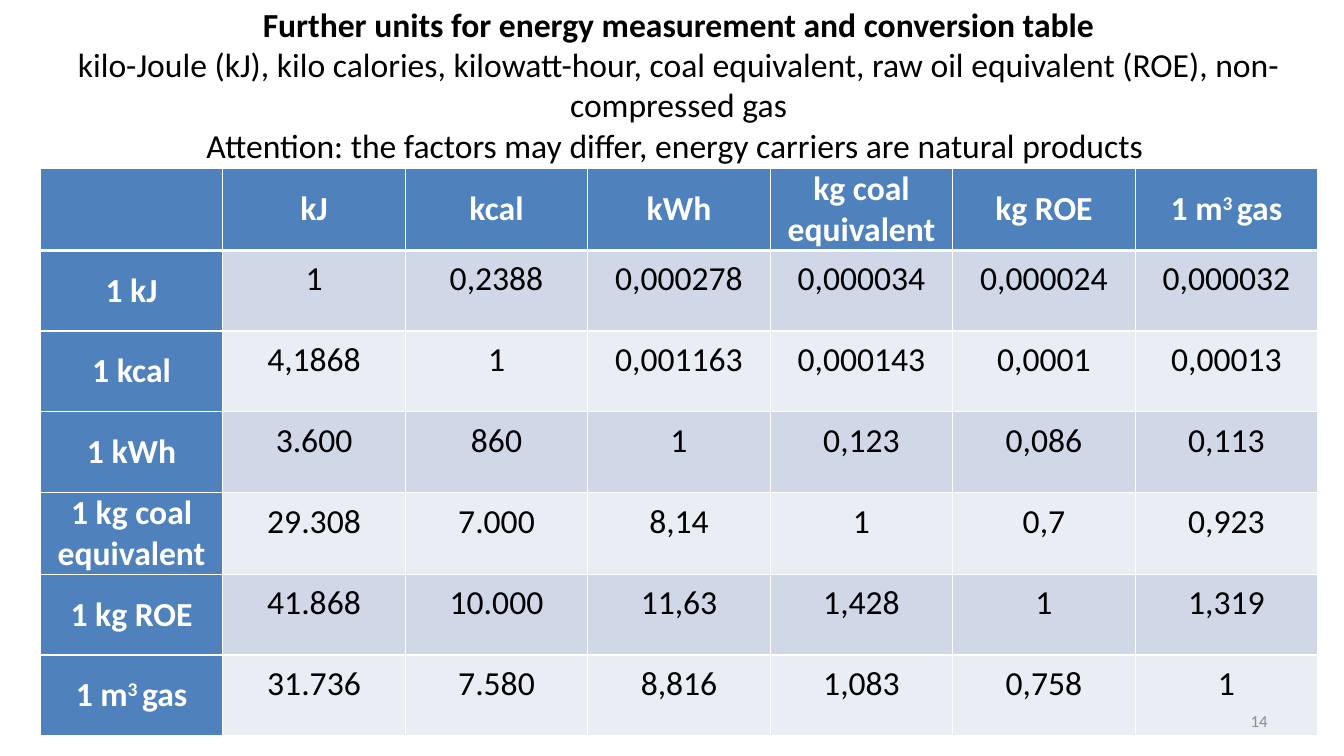
from lxml.etree import SubElement
from pptx import Presentation
from pptx.dml.color import RGBColor
from pptx.enum.text import MSO_ANCHOR, MSO_AUTO_SIZE, PP_ALIGN
from pptx.oxml.ns import qn
from pptx.util import Inches, Pt

# Content; text between two ^ marks is superscript
HEADING = "Further units for energy measurement and conversion table"
SUBTITLE = [
    "kilo-Joule (kJ), kilo calories, kilowatt-hour, coal equivalent, "
    "raw oil equivalent (ROE), non-compressed gas",
    "Attention: the factors may differ, energy carriers are natural products ",
]
CONVERSIONS = [
    ["", "kJ", "kcal", "kWh", "kg coal equivalent", "kg ROE", "1 m^3 ^gas"],
    ["1 kJ", "1", "0,2388", "0,000278", "0,000034", "0,000024", "0,000032"],
    ["1 kcal", "4,1868", "1", "0,001163", "0,000143", "0,0001", "0,00013"],
    ["1 kWh", "3.600", "860", "1", "0,123", "0,086", "0,113"],
    ["1 kg coal equivalent", "29.308", "7.000", "8,14", "1", "0,7", "0,923"],
    ["1 kg ROE", "41.868", "10.000", "11,63", "1,428", "1", "1,319"],
    ["1 m^3 ^gas", "31.736", "7.580", "8,816", "1,083", "0,758", "1"],
]
PAGE_NUMBER = "14"

FONT = "Calibri"
BLACK = RGBColor(0x00, 0x00, 0x00)
WHITE = RGBColor(0xFF, 0xFF, 0xFF)
GRAY = RGBColor(0x8C, 0x8C, 0x8C)
BLUE = RGBColor(0x4F, 0x81, 0xBD)
DARK_BAND = RGBColor(0xD0, 0xD8, 0xE8)
LIGHT_BAND = RGBColor(0xE9, 0xED, 0xF4)


def write(para, text, size=24, color=BLACK, bold=False, align=PP_ALIGN.CENTER):
    para.alignment = align
    for index, part in enumerate(text.split("^")):
        if not part:
            continue
        span = para.add_run()
        span.text = part
        span.font.name = FONT
        span.font.size = Pt(size)
        span.font.bold = bold
        span.font.color.rgb = color
        if index % 2:
            span.font._element.set("baseline", "30000")


def set_borders(cell, bottom_width):
    properties = cell._tc.get_or_add_tcPr()
    widths = {"lnL": 1, "lnR": 1, "lnT": 1, "lnB": bottom_width}
    for position, (side, width) in enumerate(widths.items()):
        line = SubElement(properties, qn(f"a:{side}"), w=str(Pt(width)))
        fill = SubElement(line, qn("a:solidFill"))
        SubElement(fill, qn("a:srgbClr"), val=str(WHITE))
        properties.insert(position, line)


deck = Presentation()
deck.slide_width, deck.slide_height = Inches(13.33), Inches(7.5)
page = deck.slides.add_slide(deck.slide_layouts[5])

# Title
title = page.shapes.title
title.left, title.top = Inches(-0.03), Inches(-0.11)
title.width, title.height = Inches(13.52), Inches(1.89)
frame = title.text_frame
frame.auto_size = MSO_AUTO_SIZE.NONE
frame.word_wrap = True
frame.vertical_anchor = MSO_ANCHOR.MIDDLE
para = frame.paragraphs[0]
write(para, HEADING, bold=True)
for line in SUBTITLE:
    para.add_line_break()
    write(para, line)

# Conversion table
row_count, column_count = len(CONVERSIONS), len(CONVERSIONS[0])
table = page.shapes.add_table(
    row_count, column_count, Inches(0.4), Inches(1.67), Inches(12.67), Inches(5.6)
).table
for r, row in enumerate(CONVERSIONS):
    for c, text in enumerate(row):
        is_header = r == 0 or c == 0
        cell = table.cell(r, c)
        cell.vertical_anchor = MSO_ANCHOR.MIDDLE
        cell.margin_left = cell.margin_right = Inches(0.07)
        cell.margin_top = cell.margin_bottom = 0
        cell.fill.solid()
        band = DARK_BAND if r % 2 else LIGHT_BAND
        cell.fill.fore_color.rgb = BLUE if is_header else band
        set_borders(cell, bottom_width=3 if r == 0 else 1)
        para = cell.text_frame.paragraphs[0]
        para.space_after = Pt(6)
        if not is_header:
            para.line_spacing = Pt(13)
        write(para, text, color=WHITE if is_header else BLACK, bold=is_header)

# Page number
box = page.shapes.add_textbox(Inches(9.56), Inches(6.95), Inches(3.11), Inches(0.4))
box.text_frame.word_wrap = True
box.text_frame.vertical_anchor = MSO_ANCHOR.MIDDLE
write(box.text_frame.paragraphs[0], PAGE_NUMBER, size=12, color=GRAY,
      align=PP_ALIGN.RIGHT)

deck.save("out.pptx")
